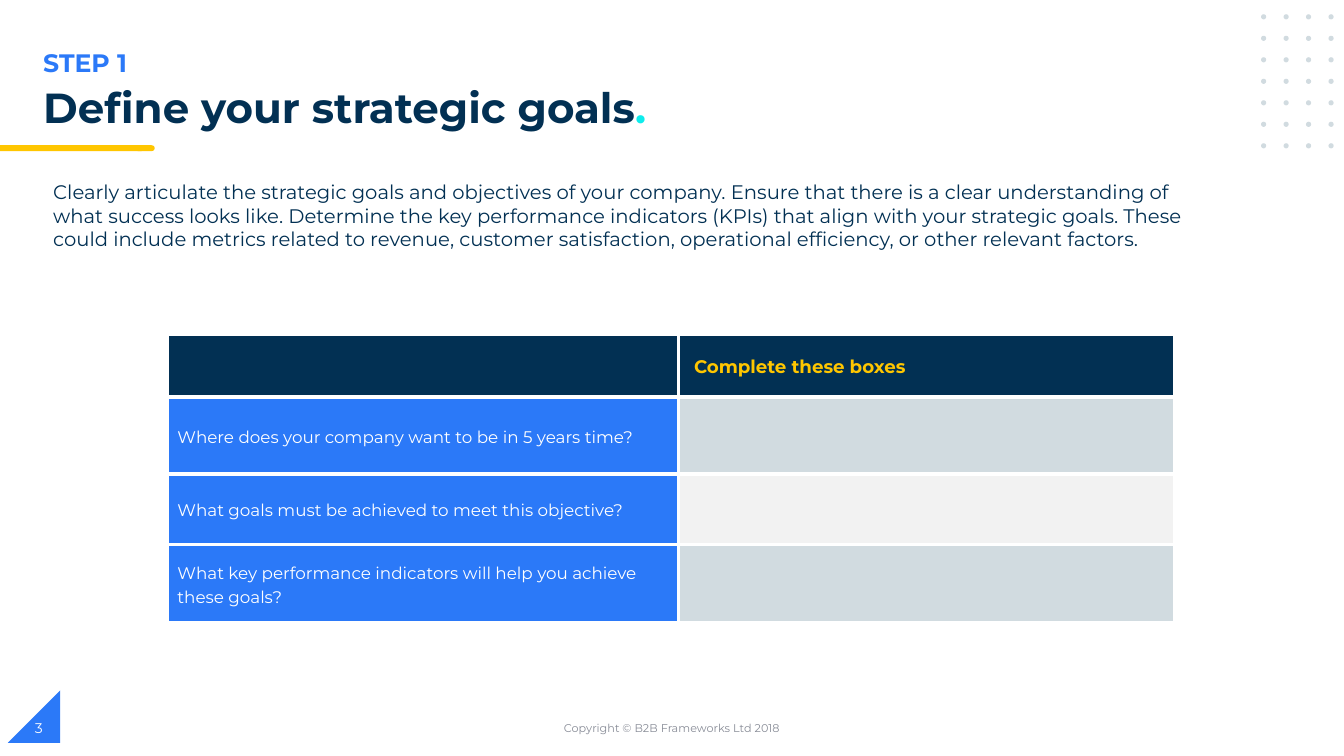
from pptx import Presentation
from pptx.dml.color import RGBColor
from pptx.enum.shapes import MSO_SHAPE
from pptx.enum.text import MSO_ANCHOR, PP_ALIGN
from pptx.oxml import parse_xml
from pptx.oxml.ns import nsdecls, qn
from pptx.util import Cm, Pt

NAVY = RGBColor(0x02, 0x30, 0x53)
BLUE = RGBColor(0x2B, 0x79, 0xF8)
GOLD = RGBColor(0xFF, 0xC6, 0x00)
AQUA = RGBColor(0x0E, 0xEC, 0xEC)
MIST = RGBColor(0xD1, 0xDB, 0xE0)
PALE = RGBColor(0xF2, 0xF2, 0xF2)
GREY = RGBColor(0x88, 0x8C, 0x97)
WHITE = RGBColor(0xFF, 0xFF, 0xFF)
FACE = "Montserrat"

INTRO = (
    "Clearly articulate the strategic goals and objectives of your company. "
    "Ensure that there is a clear understanding of what success looks like. "
    "Determine the key performance indicators (KPIs) that align with your "
    "strategic goals. These could include metrics related to revenue, customer "
    "satisfaction, operational efficiency, or other relevant factors."
)
HEAD = "Complete these boxes"
ASKS = [
    ("Where does your company want to be in 5 years time?", 1.93, MIST),
    ("What goals must be achieved to meet this objective?", 1.78, PALE),
    ("What key performance indicators will help you achieve these goals?", 1.98, MIST),
]


def style(para, size, color, bold=False):
    font = para.font
    font.name, font.size, font.bold = FACE, Pt(size), bold
    font.color.rgb = color


def add_text(slide, box, text, size, color, bold=False, anchor=MSO_ANCHOR.TOP):
    shape = slide.shapes.add_textbox(*map(Cm, box))
    frame = shape.text_frame
    frame.word_wrap = True
    frame.vertical_anchor = anchor
    para = frame.paragraphs[0]
    para.text = text
    style(para, size, color, bold)
    return para


def add_mark(shapes, kind, box, color):
    shape = shapes.add_shape(kind, *map(Cm, box))
    shape.shadow.inherit = False
    shape.fill.solid()
    shape.fill.fore_color.rgb = color
    shape.line.fill.background()
    return shape


def add_dots(slide, box, cols=4, rows=7, size=0.13):
    left, top, width, height = box
    group = slide.shapes.add_group_shape()
    across = (width - size) / (cols - 1)
    down = (height - size) / (rows - 1)
    for row in range(rows):
        for col in range(cols):
            spot = (left + col * across, top + row * down, size, size)
            add_mark(group.shapes, MSO_SHAPE.OVAL, spot, MIST)


def add_header(slide, box):
    left, top, width, height = box
    # Step label and title
    add_text(slide, (left, top, width, 1.02), "STEP 1", 18, BLUE, True)
    title = add_text(slide, (left, top + 1.01, width, 1.02),
                     "Define your strategic goals", 30, NAVY, True)
    title.line_spacing = 0.9
    stop = title.add_run()
    stop.text = "."
    stop.font.color.rgb = AQUA

    # Underline with a rounded end, running in from the slide edge
    rule = slide.shapes.add_group_shape()
    base = top + height - 0.15
    add_mark(rule.shapes, MSO_SHAPE.FLOWCHART_TERMINATOR, (3.41, base, 0.49, 0.15), GOLD)
    add_mark(rule.shapes, MSO_SHAPE.RECTANGLE, (0, base, 3.57, 0.15), GOLD)


def fill_cell(cell, color):
    props = cell._tc.get_or_add_tcPr()
    for side in ("lnL", "lnR", "lnT", "lnB"):
        props.append(parse_xml(
            f'<a:{side} {nsdecls("a")} w="{Pt(3)}"><a:solidFill>'
            f'<a:srgbClr val="{WHITE}"/></a:solidFill></a:{side}>'))
    cell.fill.solid()
    cell.fill.fore_color.rgb = color


def write_cell(cell, text, size, color, bold=False, inset=0.25):
    cell.vertical_anchor = MSO_ANCHOR.MIDDLE
    cell.margin_left, cell.margin_right = Cm(inset), Cm(0.25)
    cell.margin_top = cell.margin_bottom = 0
    para = cell.text_frame.paragraphs[0]
    para.text = text
    para.line_spacing = 1.15
    style(para, size, color, bold)


def add_goals(slide, box):
    frame = slide.shapes.add_table(len(ASKS) + 1, 2, *map(Cm, box))
    table = frame.table
    table.columns[0].width = Cm(12.88)
    table.columns[1].width = Cm(box[2] - 12.88)
    # Heading row
    table.rows[0].height = Cm(1.6)
    for cell in table.rows[0].cells:
        fill_cell(cell, NAVY)
    write_cell(table.cell(0, 1), HEAD, 13, GOLD, True, inset=0.39)
    # Questions and answer boxes
    for row, (ask, tall, shade) in enumerate(ASKS, 1):
        table.rows[row].height = Cm(tall)
        fill_cell(table.cell(row, 0), BLUE)
        fill_cell(table.cell(row, 1), shade)
        write_cell(table.cell(row, 0), ask, 12, WHITE)


def add_footer(slide, box):
    left, top, width, height = box
    # Corner with page number
    corner = add_mark(slide.shapes, MSO_SHAPE.RIGHT_TRIANGLE,
                      (left, top, height, height), BLUE)
    corner.element.spPr.find(qn("a:xfrm")).set("flipH", "1")
    line = top + 0.43
    add_text(slide, (left + 0.43, line, 7.62, 1.02), "3", 10, WHITE,
             anchor=MSO_ANCHOR.MIDDLE)
    # Copyright line
    note = add_text(slide, (left + (width - 11.43) / 2, line, 11.43, 1.02),
                    "Copyright © B2B Frameworks Ltd 2018", 8, GREY,
                    anchor=MSO_ANCHOR.MIDDLE)
    note.alignment = PP_ALIGN.CENTER


def main():
    deck = Presentation()
    deck.slide_width, deck.slide_height = Cm(33.87), Cm(19.05)
    slide = deck.slides.add_slide(deck.slide_layouts[6])
    add_dots(slide, (31.78, 0.36, 1.83, 3.38))
    add_header(slide, (0.84, 1.07, 19.71, 2.74))
    add_text(slide, (1.09, 4.42, 29.39, 2.06), INTRO, 14, NAVY)
    add_goals(slide, (4.22, 8.41, 25.38, 7.29))
    add_footer(slide, (0.2, 17.4, 33.47, 1.32))
    deck.save("out.pptx")


if __name__ == "__main__":
    main()
